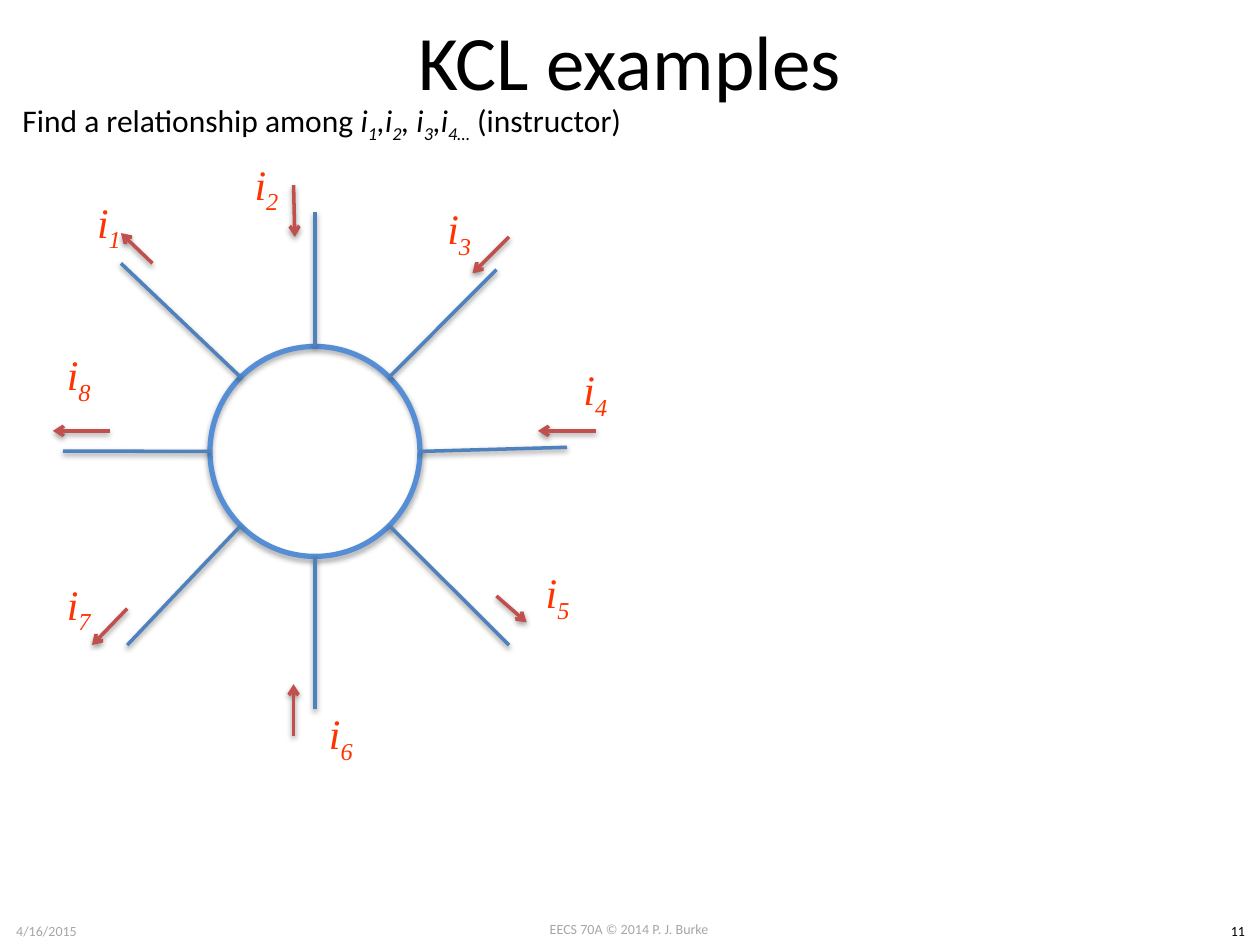
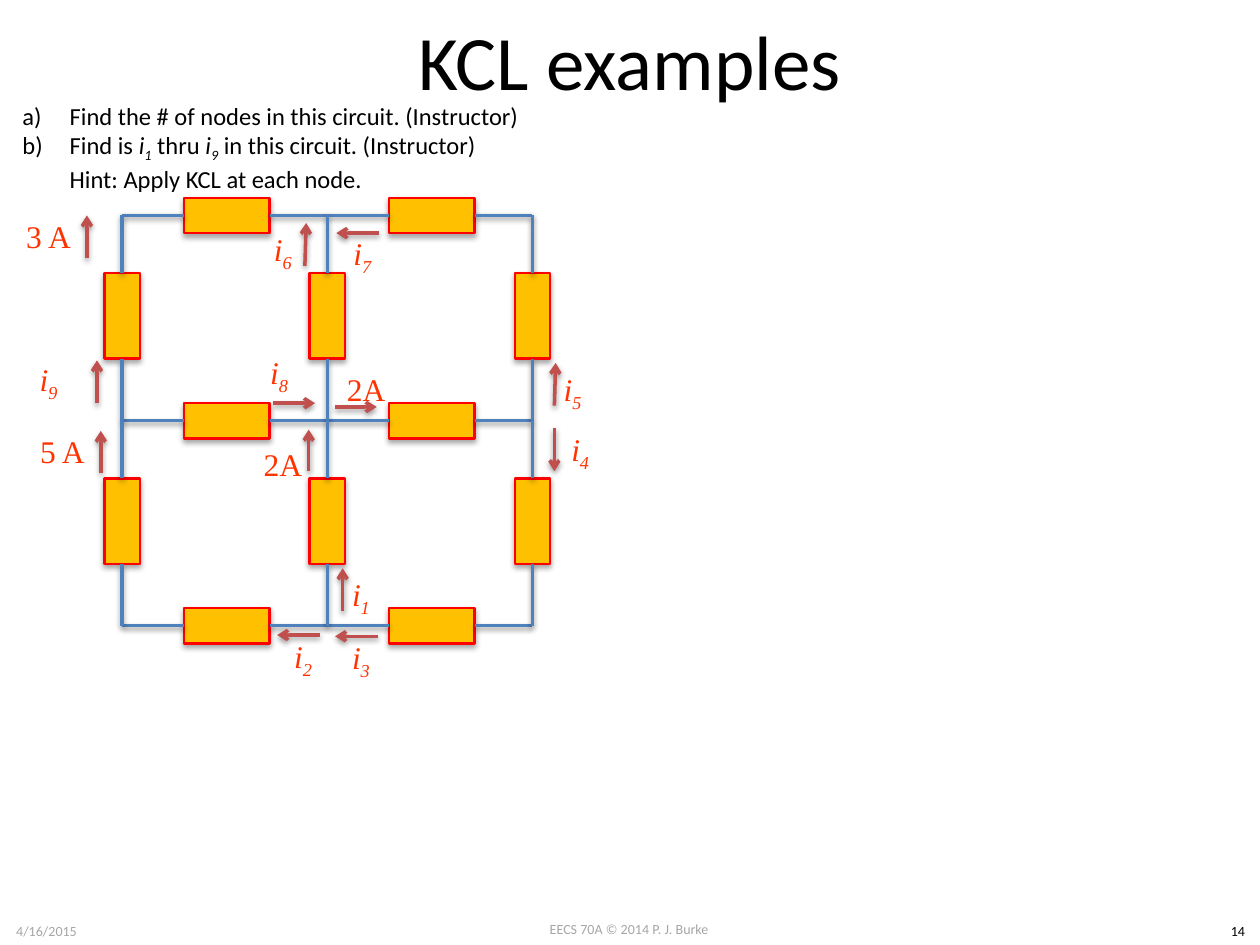
from dataclasses import dataclass
from math import cos, radians, sin
from typing import Optional

from lxml import etree
from pptx import Presentation
from pptx.dml.color import RGBColor
from pptx.enum.shapes import MSO_CONNECTOR, MSO_SHAPE
from pptx.enum.text import MSO_ANCHOR, MSO_AUTO_SIZE, PP_ALIGN
from pptx.oxml.ns import qn
from pptx.util import Inches, Pt

STRAIGHT = MSO_CONNECTOR.STRAIGHT
ELLIPSE, RECTANGLE = MSO_SHAPE.OVAL, MSO_SHAPE.RECTANGLE
TOP, MIDDLE = MSO_ANCHOR.TOP, MSO_ANCHOR.MIDDLE
LEFT, CENTER = PP_ALIGN.LEFT, PP_ALIGN.CENTER
FIT_TEXT = MSO_AUTO_SIZE.SHAPE_TO_FIT_TEXT

BLACK = RGBColor(0x00, 0x00, 0x00)
FOOTER_GRAY = RGBColor(0xA6, 0xA6, 0xA6)
WIRE_BLUE = RGBColor(0x4F, 0x81, 0xBD)
RING_BLUE = RGBColor(0x55, 0x8E, 0xD5)
ARROW_RED = RGBColor(0xC0, 0x50, 0x4D)
LABEL_RED = RGBColor(0xFF, 0x33, 0x00)
RESISTOR_FILL = RGBColor(0xFF, 0xC0, 0x00)
RESISTOR_EDGE = RGBColor(0xFF, 0x00, 0x00)

BODY_FONT, SYMBOL_FONT = "Calibri", "Times New Roman"

# The slide is a grid of 100 columns by 75 rows of square cells
SLIDE_WIDTH, SLIDE_HEIGHT = Inches(10), Inches(7.5)
CELL = SLIDE_WIDTH / 100

Point = tuple[float, float]
Box = tuple[float, float, float, float]
Arrow = tuple[Point, Point]


@dataclass(frozen=True)
class Run:
    text: str
    italic: bool = False
    subscript: bool = False
    break_before: bool = False


@dataclass(frozen=True)
class TextStyle:
    size: float
    color: RGBColor = BLACK
    font: str = BODY_FONT
    align: PP_ALIGN = CENTER
    anchor: MSO_ANCHOR = TOP
    wrap: bool = True
    fit: bool = False


@dataclass(frozen=True)
class Spoke:
    outer_end: Point
    label_at: Point
    arrow: Arrow


@dataclass(frozen=True)
class Current:
    label_at: Point
    arrow: Arrow
    index: Optional[int] = None
    value: str = ""


TITLE = TextStyle(44, anchor=MIDDLE)
FOOTER = TextStyle(8, FOOTER_GRAY, fit=True)
PAGE_NUMBER = TextStyle(8, fit=True)
QUESTION = TextStyle(18, align=LEFT, wrap=False, fit=True)
TASK = TextStyle(14, align=LEFT, wrap=False, fit=True)
SPOKE_LABEL = TextStyle(24, LABEL_RED, SYMBOL_FONT, anchor=MIDDLE)
CIRCUIT_LABEL = TextStyle(18, LABEL_RED, SYMBOL_FONT, anchor=MIDDLE)
SYMBOL_SIZE = (7.7, 6.1)
VALUE_SIZE = (6.1, 4.8)

# Node with eight branches, clockwise from the upper left
RING_CENTER, RING_RADIUS = (25, 35.83), 8.33
FIRST_ANGLE, ANGLE_STEP = 225, 45
SPOKES = [
    Spoke((9.6, 20.9), (4.8, 14.8), ((12.1, 20.9), (9.6, 18.5))),
    Spoke((25, 16.8), (17.3, 11.8), ((23.3, 14.7), (23.4, 18.8))),
    Spoke((39.4, 21.4), (32.6, 15.3), ((40.4, 18.8), (37.5, 21.7))),
    Spoke((45, 35.5), (43.4, 28.1), ((47.3, 34.2), (42.7, 34.2))),
    Spoke((40.4, 51.2), (40.4, 44.2), ((39.4, 47.3), (41.8, 49.4))),
    Spoke((25, 56.3), (23.2, 55.4), ((23.3, 58.4), (23.3, 54.3))),
    Spoke((10.1, 51.2), (2.4, 45.1), ((10.1, 48.3), (7.3, 51.2))),
    Spoke((5, 35.8), (2.4, 26.9), ((8.7, 34.2), (4.2, 34.2))),
]

# Three by three lattice of circuit nodes
NODE_ORIGIN, NODE_PITCH, NODE_COUNT = (9.7, 17.1), 16.28, 3
LEAD, RESISTOR_LENGTH, RESISTOR_WIDTH = 4.9, 6.8, 2.8
CURRENTS = [
    Current((0.8, 16.3), ((6.9, 20.5), (6.9, 17.1)), value="3 A"),
    Current((1.9, 33.4), ((8, 37.5), (8, 34.2)), value="5 A"),
    Current((0, 27.2), ((7.7, 32), (7.7, 28.6)), 9),
    Current((18.3, 26.7), ((21.7, 32), (25, 32)), 8),
    Current((24.9, 17.2), ((30.1, 18.5), (26.7, 18.5)), 7),
    Current((19.4, 34.4), ((24.5, 37.4), (24.5, 34.1)), value="2A"),
    Current((26, 28.5), ((26.6, 32.3), (29.9, 32.3)), value="2A"),
    Current((18.6, 16.9), ((24.2, 21.1), (24.3, 17.7)), 6),
    Current((41.6, 28), ((44, 32.2), (44.1, 28.8)), 5),
    Current((42.2, 32.8), ((44, 34), (44, 37.4)), 4),
    Current((24.8, 49.3), ((30, 50.5), (26.6, 50.5)), 3),
    Current((20.2, 49.2), ((25.4, 50.4), (22, 50.4)), 2),
    Current((24.8, 44.3), ((27.2, 48.5), (27.2, 45.1)), 1),
]


def cells(*counts: float) -> list[int]:
    return [round(count * CELL) for count in counts]


def symbol(index: int) -> list[Run]:
    return [Run("i", italic=True), Run(str(index), italic=True, subscript=True)]


def add_shadow(shape, distance: int, opacity: int) -> None:
    effects = etree.SubElement(shape._element.spPr, qn("a:effectLst"))
    shadow = etree.SubElement(effects, qn("a:outerShdw"), blurRad="40000",
                              dist=str(distance), dir="5400000", rotWithShape="0")
    color = etree.SubElement(shadow, qn("a:srgbClr"), val=str(BLACK))
    etree.SubElement(color, qn("a:alpha"), val=str(opacity * 1000))


def add_line(shapes, start: Point, end: Point, color: RGBColor, arrow: bool = False) -> None:
    connector = shapes.add_connector(STRAIGHT, *cells(*start, *end))
    connector.line.color.rgb = color
    connector.line.width = Pt(2)
    if arrow:
        etree.SubElement(connector.line._get_or_add_ln(), qn("a:tailEnd"), type="arrow")
    add_shadow(connector, 20000, 38)


def add_outline_shape(shapes, kind: MSO_SHAPE, box: Box, edge: RGBColor,
                      width: float, fill: Optional[RGBColor] = None):
    shape = shapes.add_shape(kind, *cells(*box))
    if fill is None:
        shape.fill.background()
    else:
        shape.fill.solid()
        shape.fill.fore_color.rgb = fill
    shape.line.color.rgb = edge
    shape.line.width = Pt(width)
    add_shadow(shape, 23000, 35)
    return shape


def add_text(slide, box: Box, paragraphs: list[list[Run]], style: TextStyle):
    frame = slide.shapes.add_textbox(*cells(*box)).text_frame
    frame.word_wrap = style.wrap
    frame.vertical_anchor = style.anchor
    if style.fit:
        frame.auto_size = FIT_TEXT
    for number, runs in enumerate(paragraphs):
        paragraph = frame.add_paragraph() if number else frame.paragraphs[0]
        paragraph.alignment = style.align
        for part in runs:
            if part.break_before:
                paragraph.add_line_break()
            run = paragraph.add_run()
            run.text = part.text
            run.font.size = Pt(style.size)
            run.font.name = style.font
            run.font.color.rgb = style.color
            run.font.italic = part.italic
            if part.subscript:
                run._r.get_or_add_rPr().set("baseline", "-25000")
    return frame


def letter_paragraphs(frame) -> None:
    indent = cells(3.75)[0]
    for paragraph in frame.paragraphs:
        properties = paragraph._p.get_or_add_pPr()
        properties.set("marL", str(indent))
        properties.set("indent", str(-indent))
        etree.SubElement(properties, qn("a:buFont"), typeface="+mj-lt")
        etree.SubElement(properties, qn("a:buAutoNum"), type="alphaLcParenR")


def add_base_slide(presentation, page: int):
    slide = presentation.slides.add_slide(presentation.slide_layouts[6])
    add_text(slide, (38.3, 72.6, 23.3, 2.4), [[Run("EECS 70A © 2014 P. J. Burke")]], FOOTER)
    add_text(slide, (0, 72.7, 7.4, 2.4), [[Run("4/16/2015")]], FOOTER)
    add_text(slide, (96.5, 72.7, 3.5, 2.4), [[Run(str(page))]], PAGE_NUMBER)
    add_text(slide, (5, 0, 90, 9.5), [[Run("KCL examples")]], TITLE)
    return slide


def add_resistor(slide, start: Point, direction: Point) -> None:
    """Draw a lead, a resistor and a second lead from one node to the next."""
    def along(distance: float) -> Point:
        return start[0] + direction[0] * distance, start[1] + direction[1] * distance

    shapes = slide.shapes.add_group_shape().shapes
    middle_x, middle_y = along(LEAD + RESISTOR_LENGTH / 2)
    box = (middle_x - RESISTOR_LENGTH / 2, middle_y - RESISTOR_WIDTH / 2,
           RESISTOR_LENGTH, RESISTOR_WIDTH)
    body = add_outline_shape(shapes, RECTANGLE, box, RESISTOR_EDGE, 1.5, RESISTOR_FILL)
    body.rotation = 90 if direction[1] else 180
    add_line(shapes, start, along(LEAD), WIRE_BLUE)
    add_line(shapes, along(LEAD + RESISTOR_LENGTH), along(NODE_PITCH), WIRE_BLUE)


def build_branch_slide(presentation) -> None:
    slide = add_base_slide(presentation, 11)
    question = [
        Run("Find a relationship among "), *symbol(1),
        Run(",", italic=True), *symbol(2),
        Run(", ", italic=True), *symbol(3),
        Run(",i", italic=True), Run("4…", italic=True, subscript=True),
        Run(" (instructor)"),
    ]
    add_text(slide, (0.8, 7.5, 51.2, 4), [question], QUESTION)

    # Node ring
    center_x, center_y = RING_CENTER
    ring_box = (center_x - RING_RADIUS, center_y - RING_RADIUS,
                2 * RING_RADIUS, 2 * RING_RADIUS)
    add_outline_shape(slide.shapes, ELLIPSE, ring_box, RING_BLUE, 3)

    # Branches with their currents
    for number, spoke in enumerate(SPOKES):
        angle = radians(FIRST_ANGLE + ANGLE_STEP * number)
        inner_end = (center_x + RING_RADIUS * cos(angle), center_y + RING_RADIUS * sin(angle))
        add_line(slide.shapes, inner_end, spoke.outer_end, WIRE_BLUE)
        add_line(slide.shapes, *spoke.arrow, ARROW_RED, arrow=True)
        add_text(slide, (*spoke.label_at, *SYMBOL_SIZE), [symbol(number + 1)], SPOKE_LABEL)


def build_circuit_slide(presentation) -> None:
    slide = add_base_slide(presentation, 14)
    tasks = [
        [Run("Find the # of nodes in this circuit. (Instructor)")],
        [Run("Find is "), *symbol(1), Run(" thru "), *symbol(9),
         Run(" in this circuit. (Instructor)"),
         Run("Hint: Apply KCL at each node.", break_before=True)],
    ]
    letter_paragraphs(add_text(slide, (0.8, 7.5, 41.7, 8.1), tasks, TASK))

    # Resistors run right and up from each node
    for row in range(NODE_COUNT):
        for column in range(NODE_COUNT):
            node = (NODE_ORIGIN[0] + column * NODE_PITCH, NODE_ORIGIN[1] + row * NODE_PITCH)
            if column < NODE_COUNT - 1:
                add_resistor(slide, node, (1, 0))
            if row > 0:
                add_resistor(slide, node, (0, -1))

    # Currents
    for current in CURRENTS:
        add_line(slide.shapes, *current.arrow, ARROW_RED, arrow=True)
        known = current.index is None
        runs = [Run(current.value)] if known else symbol(current.index)
        size = VALUE_SIZE if known else SYMBOL_SIZE
        add_text(slide, (*current.label_at, *size), [runs], CIRCUIT_LABEL)


def main() -> None:
    presentation = Presentation()
    presentation.slide_width, presentation.slide_height = SLIDE_WIDTH, SLIDE_HEIGHT
    build_branch_slide(presentation)
    build_circuit_slide(presentation)
    presentation.save("out.pptx")


if __name__ == "__main__":
    main()
